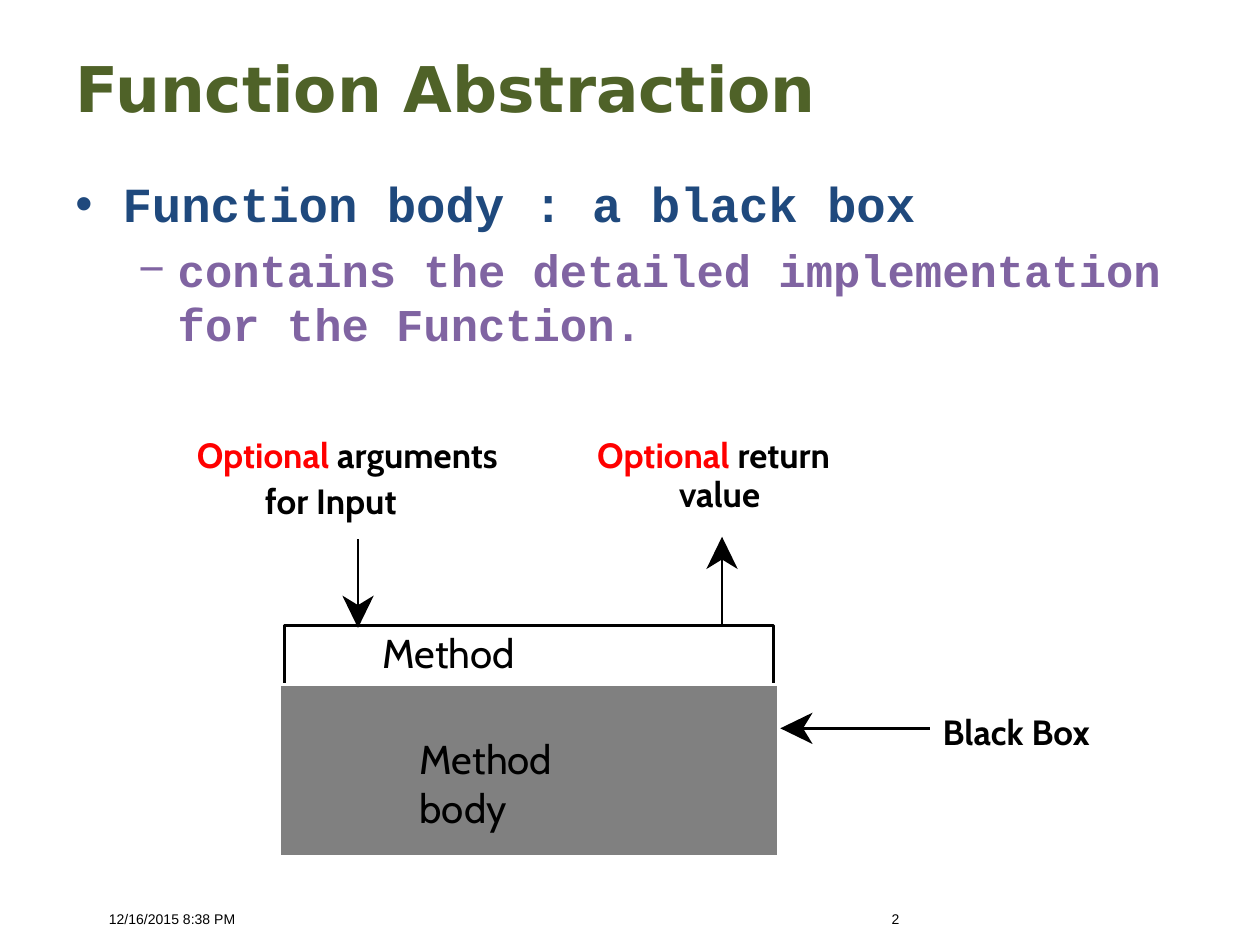
from typing import NamedTuple
from lxml.etree import SubElement
from pptx import Presentation
from pptx.dml.color import RGBColor
from pptx.enum.shapes import MSO_CONNECTOR, MSO_SHAPE
from pptx.enum.text import MSO_ANCHOR, PP_ALIGN
from pptx.oxml.ns import qn
from pptx.util import Pt

BLACK, WHITE, RED, GRAY = "000000", "FFFFFF", "FF0000", "808080"
STROKE = 1.63


class Box(NamedTuple):
    left: float
    top: float
    width: float
    height: float


class Label(NamedTuple):
    box: Box
    runs: list
    size: float = 20
    bold: bool = True


class Panel(NamedTuple):
    box: Box
    fill: str
    edge: str


class Arrow(NamedTuple):
    tail: tuple
    tip: tuple


def color(code: str) -> RGBColor:
    return RGBColor.from_string(code)


def write(para, runs, *, size, font="Cabin", bold=False, align=PP_ALIGN.LEFT,
          mark="", left=0, hang=0, before=0) -> None:
    para.alignment = align
    para.space_before = Pt(before)
    if mark:
        props = para._p.get_or_add_pPr()
        props.set("marL", str(Pt(left)))
        props.set("indent", str(Pt(-hang)))
        SubElement(props, qn("a:buFont")).set("typeface", "Arial")
        SubElement(props, qn("a:buChar")).set("char", mark)
    for words, code in runs:
        run = para.add_run()
        run.text = words
        run.font.size = Pt(size)
        run.font.name = font
        run.font.bold = bold
        run.font.color.rgb = color(code)


def frame(slide, box: Box, anchor=MSO_ANCHOR.TOP, inset=(0, 0)):
    area = slide.shapes.add_textbox(*map(Pt, box)).text_frame
    area.word_wrap = True
    area.vertical_anchor = anchor
    area.margin_left = area.margin_right = Pt(inset[0])
    area.margin_top = area.margin_bottom = Pt(inset[1])
    return area


def label(slide, item: Label) -> None:
    area = frame(slide, item.box)
    write(area.paragraphs[0], item.runs, size=item.size, bold=item.bold)


def panel(slide, item: Panel) -> None:
    shape = slide.shapes.add_shape(MSO_SHAPE.RECTANGLE, *map(Pt, item.box))
    shape.shadow.inherit = False
    shape.fill.solid()
    shape.fill.fore_color.rgb = color(item.fill)
    shape.line.color.rgb = color(item.edge)
    shape.line.width = Pt(STROKE)


def arrow(slide, item: Arrow) -> None:
    (ax, ay), (bx, by) = item
    span = abs(bx - ax) + abs(by - ay)
    ux, uy = (bx - ax) / span, (by - ay) / span

    def spot(back: float, side: float = 0) -> tuple:
        return Pt(bx - ux * back - uy * side), Pt(by - uy * back + ux * side)

    line = slide.shapes.add_connector(
        MSO_CONNECTOR.STRAIGHT, Pt(ax), Pt(ay), *spot(12))
    line.line.color.rgb = color(BLACK)
    line.line.width = Pt(STROKE)
    SubElement(line._element.spPr, qn("a:effectLst"))
    path = slide.shapes.build_freeform(*spot(0))
    path.add_line_segments([spot(18.5, 9), spot(13), spot(18.5, -9)])
    head = path.convert_to_shape()
    head.shadow.inherit = False
    head.fill.solid()
    head.fill.fore_color.rgb = color(BLACK)
    head.line.fill.background()


def main() -> None:
    deck = Presentation()
    deck.slide_width, deck.slide_height = Pt(720), Pt(540)
    slide = deck.slides.add_slide(deck.slide_layouts[6])

    title = frame(slide, Box(36, 21, 648, 57.6), MSO_ANCHOR.MIDDLE, (7.2, 3.6))
    write(title.paragraphs[0], [("Function Abstraction", "4F6228")],
          size=36, font="DejaVu Sans", bold=True)

    body = frame(slide, Box(36, 95.76, 648, 399.6), inset=(7.2, 3.6))
    write(body.paragraphs[0], [("Function body : a black box", "1F497D")],
          size=28, font="Courier New", bold=True, mark="•", left=27, hang=27)
    write(body.add_paragraph(),
          [("contains the detailed implementation for the Function.", "8064A2")],
          size=26, font="Courier New", bold=True, mark="−",
          left=58.5, hang=22.5, before=5.2)

    for left, words in ((14.4, "12/16/2015 8:38 PM"), (427.7, "2")):
        foot = frame(slide, Box(left, 519.8, 168, 10), MSO_ANCHOR.MIDDLE)
        write(foot.paragraphs[0], [(words, BLACK)], size=8, font="Arial",
              align=PP_ALIGN.CENTER)

    panels = [
        Panel(Box(162.7, 357.3, 279.4, 33.8), WHITE, BLACK),
        Panel(Box(160, 391, 285, 98.6), GRAY, WHITE),
    ]
    for item in panels:
        panel(slide, item)

    labels = [
        Label(Box(218.5, 358.8, 165.6, 27.4), [("Method", BLACK)], 23, False),
        Label(Box(239.8, 419.8, 123, 27.4), [("Method body", BLACK)], 23, False),
        Label(Box(538.6, 406, 92.2, 24.5), [("Black Box", BLACK)]),
        Label(Box(151.4, 273.8, 103.6, 24.5), [("for Input", BLACK)]),
        Label(Box(112.5, 247.7, 184.3, 24.5),
              [("Optional ", RED), ("arguments", BLACK)]),
        Label(Box(341.3, 247.7, 163.4, 24.5),
              [("Optional", RED), (" return", BLACK)]),
        Label(Box(388, 270, 51, 24.5), [("value", BLACK)]),
    ]
    for item in labels:
        label(slide, item)

    arrows = [
        Arrow((412.6, 357.1), (412.6, 306.7)),
        Arrow((204.6, 308.2), (204.6, 358.8)),
        Arrow((531.4, 416.2), (445.9, 416.2)),
    ]
    for item in arrows:
        arrow(slide, item)

    deck.save("out.pptx")


if __name__ == "__main__":
    main()
